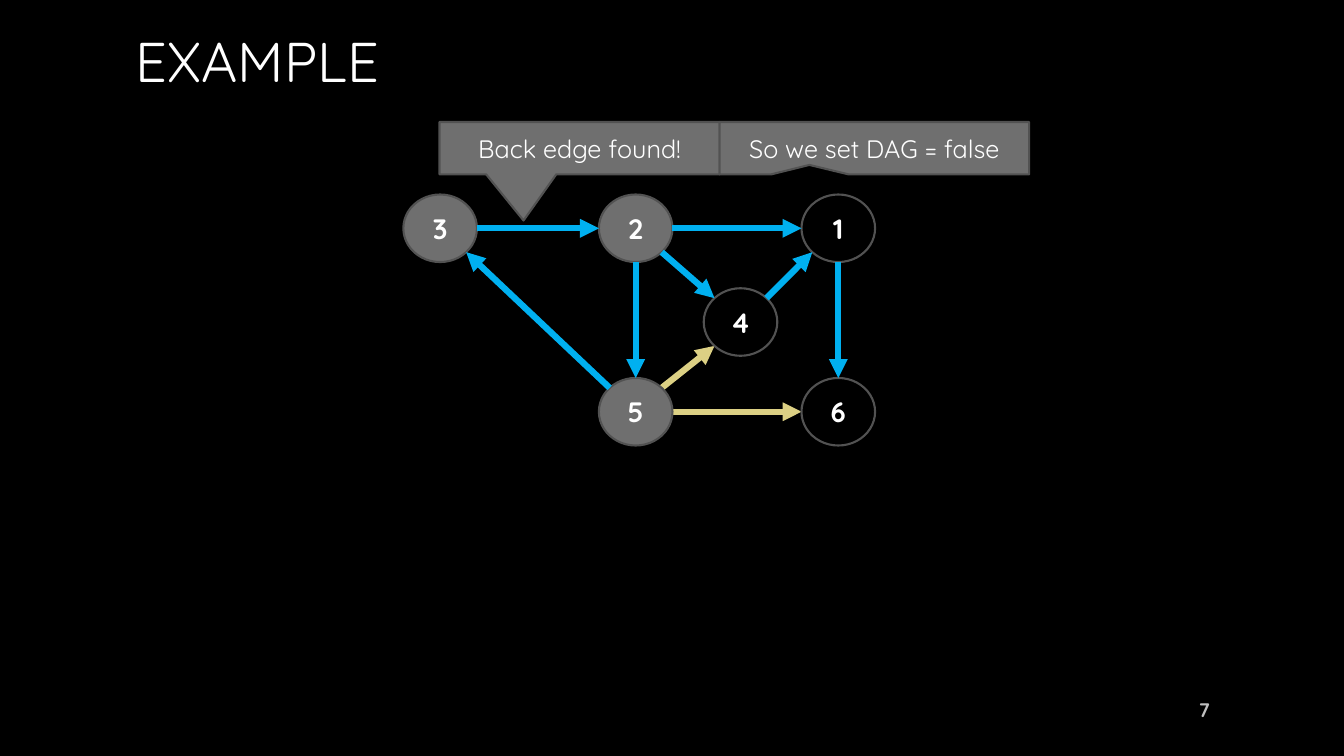
from dataclasses import dataclass
from math import sqrt

from lxml.etree import SubElement
from pptx import Presentation
from pptx.dml.color import RGBColor as RGB
from pptx.enum.shapes import MSO_CONNECTOR as Line, MSO_SHAPE as Shape
from pptx.enum.text import MSO_ANCHOR as Anchor, PP_ALIGN as Align
from pptx.oxml.ns import qn
from pptx.util import Inches, Pt


@dataclass(frozen=True)
class Theme:
    font: str = "Quicksand"
    background: RGB = RGB(0x00, 0x00, 0x00)
    text: RGB = RGB(0xFF, 0xFF, 0xFF)
    title_fade: RGB = RGB(0xA6, 0xA6, 0xA6)
    page_number: RGB = RGB(0xBF, 0xBF, 0xBF)
    grey: RGB = RGB(0x6F, 0x6F, 0x6F)
    outline: RGB = RGB(0x52, 0x52, 0x52)
    unexplored: RGB = RGB(0xDC, 0xD0, 0x84)
    explored: RGB = RGB(0x00, 0xB0, 0xF0)
    title_size: int = 40
    node_size: int = 20
    callout_size: int = 18
    page_size: int = 14
    outline_width: float = 1.5
    edge_width: float = 4.5


class Board:
    """Draws on one slide, measured in a grid of 40 columns and 30 rows."""
    COLUMNS, ROWS = 40, 30
    NODE_WIDTH, NODE_HEIGHT = 2.19, 2.68

    def __init__(self, deck, theme):
        self.theme = theme
        self.column = deck.slide_width / self.COLUMNS
        self.row = deck.slide_height / self.ROWS
        self.slide = deck.slides.add_slide(deck.slide_layouts[6])
        backdrop = self.slide.background.fill
        backdrop.solid()
        backdrop.fore_color.rgb = theme.background

    def place(self, *lengths):
        """Turn alternating columns and rows into slide lengths."""
        units = (self.column, self.row) * 2
        return [round(length * unit) for length, unit in zip(lengths, units)]

    def add_words(self, shape, words, size, align, color=None, bold=False):
        frame = shape.text_frame
        frame.word_wrap = True
        frame.vertical_anchor = Anchor.MIDDLE
        line = frame.paragraphs[0]
        line.alignment = align
        run = line.add_run()
        run.text = words
        run.font.name = self.theme.font
        run.font.size = Pt(size)
        run.font.bold = bold
        run.font.color.rgb = color or self.theme.text
        return run

    def label(self, box, words, size, align, color=None, bold=False):
        holder = self.slide.shapes.add_textbox(*self.place(*box))
        return self.add_words(holder, words, size, align, color, bold)

    def title(self, box, words):
        run = self.label(box, words, self.theme.title_size, Align.LEFT)
        run.font.fill.gradient()
        run.font.fill.gradient_angle = 267
        shades = (self.theme.text, self.theme.title_fade)
        for stop, shade in zip(run.font.fill.gradient_stops, shades):
            stop.color.rgb = shade

    def outlined(self, kind, box, fill):
        shape = self.slide.shapes.add_shape(kind, *self.place(*box))
        shape.shadow.inherit = False
        shape.fill.solid()
        shape.fill.fore_color.rgb = fill
        shape.line.color.rgb = self.theme.outline
        shape.line.width = Pt(self.theme.outline_width)
        return shape

    def node(self, center, name, fill):
        x, y = center
        width, height = self.NODE_WIDTH, self.NODE_HEIGHT
        box = (x - width / 2, y - height / 2, width, height)
        circle = self.outlined(Shape.OVAL, box, fill)
        self.add_words(circle, name, self.theme.node_size, Align.CENTER, bold=True)

    def callout(self, box, words, tip):
        bubble = self.outlined(Shape.RECTANGULAR_CALLOUT, box, self.theme.grey)
        for index, offset in enumerate(tip):
            bubble.adjustments[index] = offset
        self.add_words(bubble, words, self.theme.callout_size, Align.CENTER)

    def edge(self, start, end, color):
        """Join the facing rims of two nodes, in one of eight directions."""
        across, down = [(b > a) - (b < a) for a, b in zip(start, end)]
        reach = sqrt(across ** 2 + down ** 2)
        dx = across / reach * self.NODE_WIDTH / 2
        dy = down / reach * self.NODE_HEIGHT / 2
        points = self.place(start[0] + dx, start[1] + dy,
                            end[0] - dx, end[1] - dy)
        arrow = self.slide.shapes.add_connector(Line.STRAIGHT, *points)
        arrow.line.color.rgb = color
        arrow.line.width = Pt(self.theme.edge_width)
        # Arrowhead, and no shadow
        properties = arrow._element.spPr
        SubElement(properties.find(qn("a:ln")), qn("a:tailEnd"), type="triangle")
        SubElement(properties, qn("a:effectLst"))


# Graph: node centres, nodes still on the search stack, and edges
TOP, MIDDLE, BOTTOM = 9.06, 12.78, 16.34
NODES = {
    "6": (24.95, BOTTOM),
    "1": (24.95, TOP),
    "2": (18.92, TOP),
    "5": (18.92, BOTTOM),
    "3": (13.1, TOP),
    "4": (22.04, MIDDLE),
}
ON_STACK = "235"
UNEXPLORED = ["54", "56"]
EXPLORED = ["16", "24", "21", "41", "25", "53", "32"]

# Callouts side by side in one band
CALLOUT_TOP, CALLOUT_HEIGHT = 4.84, 2.08
BACK_EDGE_LEFT, BACK_EDGE_WIDTH, RESULT_WIDTH = 13.08, 8.34, 9.21


def main():
    deck = Presentation()
    deck.slide_width, deck.slide_height = Inches(13.33), Inches(7.5)
    theme = Theme()
    board = Board(deck, theme)

    board.title((3.75, 0.16, 32.5, 4.48), "EXAMPLE")

    # Edges not yet followed lie below the nodes
    for start, end in UNEXPLORED:
        board.edge(NODES[start], NODES[end], theme.unexplored)
    for name, center in NODES.items():
        fill = theme.grey if name in ON_STACK else theme.background
        board.node(center, name, fill)

    # Back edge callout, then followed edges, then the result
    board.callout((BACK_EDGE_LEFT, CALLOUT_TOP, BACK_EDGE_WIDTH, CALLOUT_HEIGHT),
                  "Back edge found!", (-0.2, 1.38))
    for start, end in EXPLORED:
        board.edge(NODES[start], NODES[end], theme.explored)
    result_left = BACK_EDGE_LEFT + BACK_EDGE_WIDTH
    board.callout((result_left, CALLOUT_TOP, RESULT_WIDTH, CALLOUT_HEIGHT),
                  "So we set DAG = false", (-0.21, 0.32))

    # Page number
    board.label((34.51, 27.36, 1.8, 1.6), "7", theme.page_size, Align.RIGHT,
                theme.page_number, bold=True)

    deck.save("out.pptx")


if __name__ == "__main__":
    main()
